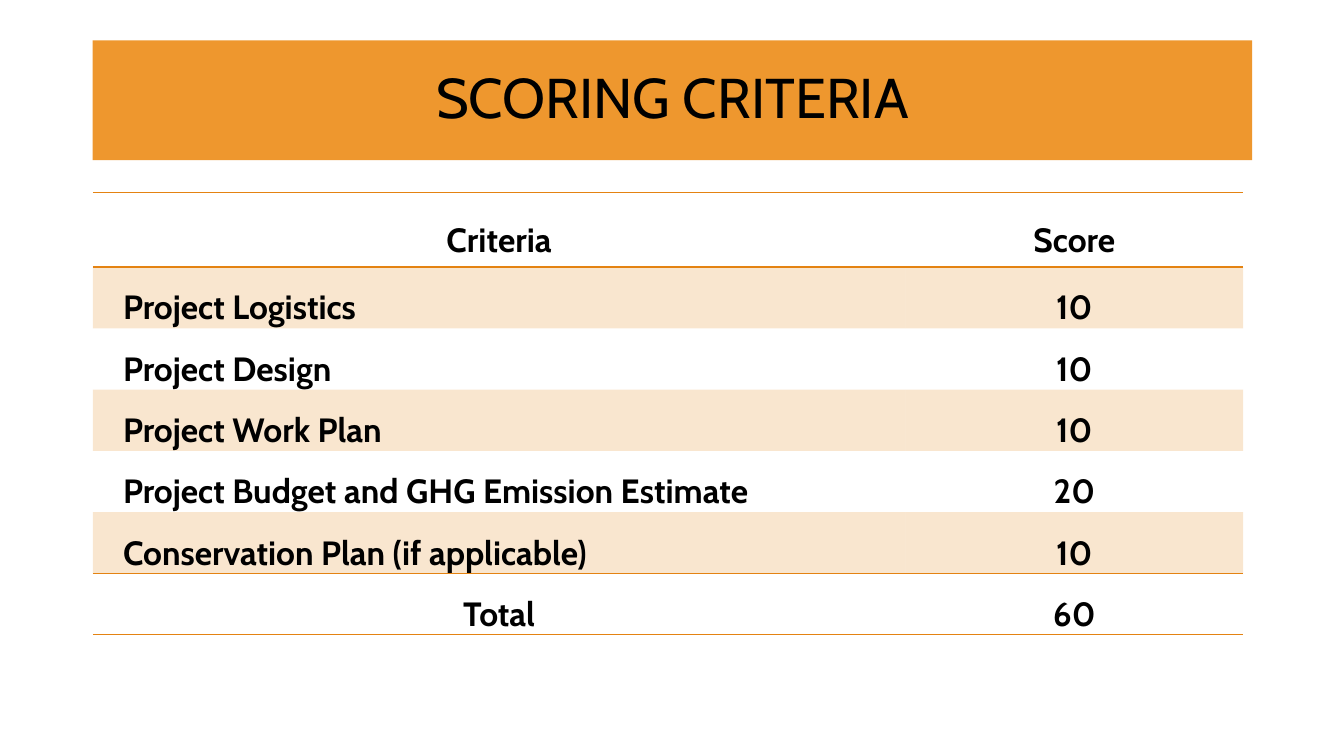
from lxml import etree
from pptx import Presentation
from pptx.dml.color import RGBColor
from pptx.enum.shapes import MSO_SHAPE
from pptx.enum.text import MSO_ANCHOR, PP_ALIGN
from pptx.oxml.ns import qn
from pptx.util import Inches, Pt

BLACK = RGBColor(0x00, 0x00, 0x00)
BANNER = RGBColor(0xEE, 0x97, 0x2E)
ACCENT = RGBColor(0xE4, 0x83, 0x12)
FONT = "Cabin"
NO_STYLE = "{2D5ABB26-0587-4C30-8999-92F81FD0307C}"

SCORES = [
    ("Criteria", "Score"),
    ("Project Logistics", "10"),
    ("Project Design", "10"),
    ("Project Work Plan", "10"),
    ("Project Budget and GHG Emission Estimate", "20"),
    ("Conservation Plan (if applicable)", "10"),
    ("Total", "60"),
]


def write(frame, text, size, bold=False, align=PP_ALIGN.CENTER, spacing=1.0, indent=0):
    para = frame.paragraphs[0]
    para.alignment = align
    para.line_spacing = spacing
    if indent:
        properties = para._p.get_or_add_pPr()
        properties.set("marL", str(Inches(indent)))
        properties.set("indent", "0")
    span = para.add_run()
    span.text = text
    span.font.name = FONT
    span.font.size = Pt(size)
    span.font.bold = bold
    span.font.color.rgb = BLACK


def shade(cell, color, percent):
    """Fill a cell with a colour at the given opacity."""
    cell.fill.solid()
    cell.fill.fore_color.rgb = color
    color_tag = cell._tc.tcPr.find(qn("a:solidFill"))[0]
    etree.SubElement(color_tag, qn("a:alpha"), val=str(percent * 1000))


def rule_above_and_below(cell, color, width):
    properties = cell._tc.get_or_add_tcPr()
    for position, side in enumerate(("a:lnT", "a:lnB")):
        line = etree.Element(qn(side), w=str(Pt(width)))
        fill = etree.SubElement(line, qn("a:solidFill"))
        etree.SubElement(fill, qn("a:srgbClr"), val=str(color))
        properties.insert(position, line)


def add_banner(page, text, left, top, width, height):
    box = page.shapes.add_shape(
        MSO_SHAPE.RECTANGLE, Inches(left), Inches(top), Inches(width), Inches(height))
    box.shadow.inherit = False
    box.fill.solid()
    box.fill.fore_color.rgb = BANNER
    box.line.fill.background()
    box.text_frame.word_wrap = True
    box.text_frame.vertical_anchor = MSO_ANCHOR.MIDDLE
    write(box.text_frame, text, 40, spacing=0.9)


def add_score_table(page, rows, left, top, width, height):
    score_width, header_height = 3.35, 0.74
    table = page.shapes.add_table(
        len(rows), 2, Inches(left), Inches(top), Inches(width), Inches(height)).table
    table.first_row = table.horz_banding = False
    table._tbl.tblPr.find(qn("a:tableStyleId")).text = NO_STYLE
    table.columns[0].width = Inches(width - score_width)
    table.columns[1].width = Inches(score_width)

    last = len(rows) - 1
    for index, texts in enumerate(rows):
        row_height = (height - header_height) / last if index else header_height
        table.rows[index].height = Inches(row_height)
        ruled = index in (0, last)
        for column, text in enumerate(texts):
            cell = table.cell(index, column)
            cell.margin_left = cell.margin_right = 0
            cell.margin_top = cell.margin_bottom = 0
            cell.vertical_anchor = MSO_ANCHOR.MIDDLE
            named = column == 0 and not ruled
            write(cell.text_frame, text, 24, bold=True, spacing=1.5,
                  align=PP_ALIGN.LEFT if named else PP_ALIGN.CENTER,
                  indent=0.3 if named else 0)
            if index % 2:
                shade(cell, ACCENT, 20)
            else:
                cell.fill.background()
            if ruled:
                rule_above_and_below(cell, ACCENT, 1)


def main():
    deck = Presentation()
    deck.slide_width, deck.slide_height = Inches(13.33), Inches(7.5)
    page = deck.slides.add_slide(deck.slide_layouts[6])
    add_banner(page, "SCORING CRITERIA", 0.92, 0.4, 11.5, 1.19)
    add_score_table(page, SCORES, 0.92, 1.91, 11.41, 4.17)
    deck.save("out.pptx")


if __name__ == "__main__":
    main()
